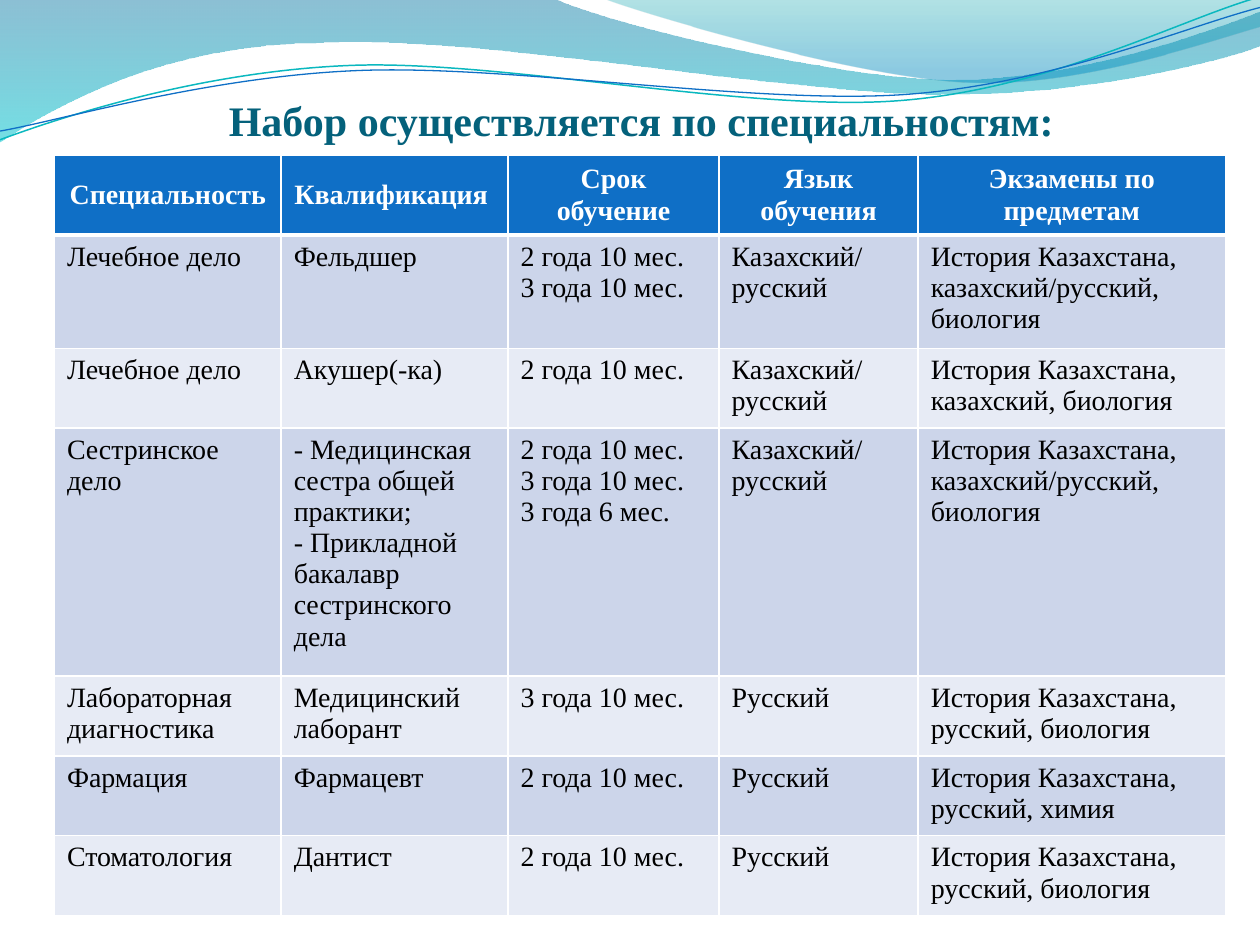
import dataclasses
import typing

import pptx
import pptx.dml.color
import pptx.enum.text
import pptx.oxml
import pptx.oxml.ns
import pptx.util

Pt = pptx.util.Pt
RGB = pptx.dml.color.RGBColor
qn = pptx.oxml.ns.qn
NS = pptx.oxml.ns.nsdecls("a")
PP_ALIGN = pptx.enum.text.PP_ALIGN
ANCHOR = pptx.enum.text.MSO_ANCHOR

FONT = "Times New Roman"
WHITE = RGB(0xFF, 0xFF, 0xFF)
BLACK = RGB(0x00, 0x00, 0x00)
BLUE = RGB(0x0F, 0x6F, 0xC6)
TITLE_BLUE = RGB(0x04, 0x61, 0x7B)
BAND_DARK = RGB(0xCC, 0xD5, 0xEA)
BAND_LIGHT = RGB(0xE7, 0xEB, 0xF5)
TEAL = RGB(0x0A, 0xB8, 0xBF)
DEEP_BLUE = RGB(0x00, 0x74, 0xA1)
CYAN = RGB(0x00, 0xC6, 0xCF)
SEA_GREEN = RGB(0x00, 0xA1, 0xA9)
SKY_BLUE = RGB(0x00, 0x8B, 0xBF)
LINE_TILT = 357.3

Point = tuple[float, float]


class Stop(typing.NamedTuple):
    position: float
    color: RGB
    opacity: int


@dataclasses.dataclass
class Wave:
    start: Point
    segments: list[tuple[Point, ...]]
    stops: tuple[Stop, ...] = ()
    line_color: RGB = WHITE
    line_width: float = 0


WAVES = [
    Wave((0, -0.7), [
        ((316.8, -0.7),),
        ((342.7, 12.2), (478.1, 45.4), (545.8, 45.4)),
        ((614.2, 45.4), (689.8, 18.7), (720, 6.5)),
        ((720.7, 25.9),),
        ((707.8, 31.7), (626.4, 54.7), (537.1, 54)),
        ((447.8, 54), (275, 20.2), (185, 24.5)),
        ((92.9, 25.2), (33.1, 59.8), (-0.7, 81.4)),
    ], stops=(Stop(0, DEEP_BLUE, 45), Stop(1, CYAN, 55))),
    Wave((344.9, -0.7), [
        ((366.5, 7.9), (491, 44.6), (553.7, 46.8)),
        ((616.3, 49.7), (691.9, 23), (720, 15.1)),
        ((720, 0),),
    ], stops=(Stop(0, SEA_GREEN, 30), Stop(0.8, SKY_BLUE, 45))),
    Wave((-1.4, 62.9), [
        ((33.8, 51.7), (114.1, 29.4), (199.8, 29.9)),
        ((284.8, 30.3), (425.9, 67.3), (512.5, 64.8)),
        ((599.1, 62.4), (676.5, 25.7), (720.2, 15.6)),
    ], line_color=TEAL, line_width=0.85),
    Wave((-1.1, 57.9), [
        ((32.9, 53.7), (118.3, 32.5), (204.1, 33)),
        ((290.5, 33.4), (428.9, 63.1), (515.5, 61.4)),
        ((601.4, 59.6), (678.4, 30.1), (721.4, 21.3)),
    ], line_color=BLUE, line_width=0.75),
]

COL_WIDTHS = [129.6, 129.6, 120.6, 113.8, 175.6]
ROW_HEIGHTS = [45.4, 64.6, 45.4, 141.7, 45.4, 45.4, 45.4]
BOTH_LANGUAGES = "Казахский/\nрусский"
ROWS = [
    ("Специальность ", "Квалификация ", "Срок обучение", "Язык обучения", "Экзамены по предметам"),
    ("Лечебное дело", "Фельдшер", "2 года 10 мес.\n3 года 10 мес.", BOTH_LANGUAGES,
     "История Казахстана, казахский/русский, биология"),
    ("Лечебное дело", "Акушер(-ка)", "2 года 10 мес.", BOTH_LANGUAGES,
     "История Казахстана, казахский, биология"),
    ("Сестринское дело",
     "- Медицинская сестра общей практики;\n- Прикладной бакалавр сестринского дела",
     "2 года 10 мес.\n3 года 10 мес.\n3 года 6 мес.", BOTH_LANGUAGES,
     "История Казахстана, казахский/русский, биология"),
    ("Лабораторная диагностика", "Медицинский лаборант", "3 года 10 мес.", "Русский",
     "История Казахстана, русский, биология"),
    ("Фармация", "Фармацевт", "2 года 10 мес.", "Русский",
     "История Казахстана, русский, химия"),
    ("Стоматология", "Дантист", "2 года 10 мес.", "Русский",
     "История Казахстана, русский, биология"),
]


def bend_segments(sp: pptx.shapes.autoshape.Shape, wave: Wave) -> None:
    """Turn each three-point run of straight lines into one cubic curve."""
    lines = iter(list(sp._element.spPr.iter(qn("a:lnTo"))))
    for seg in wave.segments:
        run = [next(lines) for _ in seg]
        if len(run) == 3:
            curve = pptx.oxml.parse_xml(f"<a:cubicBezTo {NS}/>")
            run[0].addprevious(curve)
            for line in run:
                curve.append(line[0])
                line.getparent().remove(line)


def draw_wave(s: pptx.slide.Slide, wave: Wave) -> None:
    """Draw a gradient wave or a tilted wave line."""
    points = [(Pt(x), Pt(y)) for seg in wave.segments for x, y in seg]
    builder = s.shapes.build_freeform(Pt(wave.start[0]), Pt(wave.start[1]))
    builder.add_line_segments(points, close=bool(wave.stops))
    sp = builder.convert_to_shape()
    bend_segments(sp, wave)
    sp.shadow.inherit = False
    if not wave.stops:
        sp.rotation = LINE_TILT
        sp.fill.background()
        sp.line.color.rgb = wave.line_color
        sp.line.width = Pt(wave.line_width)
        return
    sp.line.fill.background()
    sp.fill.gradient()
    sp.fill.gradient_angle = 270
    for target, stop in zip(sp.fill.gradient_stops, wave.stops):
        target.position = stop.position
        target.color.rgb = stop.color
    for clr, stop in zip(sp._element.spPr.iter(qn("a:srgbClr")), wave.stops):
        clr.append(pptx.oxml.parse_xml(f'<a:alpha {NS} val="{stop.opacity * 1000}"/>'))


def style_text(tf: pptx.text.text.TextFrame, size: float, color: RGB, bold: bool,
               align: PP_ALIGN) -> None:
    """Apply one style to every paragraph."""
    for p in tf.paragraphs:
        p.alignment = align
        p.font.name = FONT
        p.font.size = Pt(size)
        p.font.bold = bold
        p.font.color.rgb = color


def draw_title(s: pptx.slide.Slide, text: str) -> None:
    """Draw the slide heading."""
    sp = s.shapes.add_textbox(Pt(42.5), Pt(60), Pt(648), Pt(23))
    tf = sp.text_frame
    tf.word_wrap = True
    tf.vertical_anchor = ANCHOR.BOTTOM
    tf.margin_left = tf.margin_right = tf.margin_bottom = 0
    tf.margin_top = Pt(3.6)
    tf.text = text
    style_text(tf, 24, TITLE_BLUE, True, PP_ALIGN.CENTER)


def set_borders(cell: pptx.table._Cell, top: float, bottom: float) -> None:
    """Give a cell white borders."""
    tc_pr = cell._tc.get_or_add_tcPr()
    for side, width in (("L", 1), ("R", 1), ("T", top), ("B", bottom)):
        tc_pr.append(pptx.oxml.parse_xml(
            f'<a:ln{side} {NS} w="{Pt(width)}"><a:solidFill>'
            f'<a:srgbClr val="{WHITE}"/></a:solidFill></a:ln{side}>'))


def draw_table(s: pptx.slide.Slide) -> None:
    """Draw the table of specialities."""
    table = s.shapes.add_table(len(ROWS), len(COL_WIDTHS), Pt(31.1), Pt(88.6),
                               Pt(sum(COL_WIDTHS)), Pt(sum(ROW_HEIGHTS))).table
    for column, width in zip(table.columns, COL_WIDTHS):
        column.width = Pt(width)
    for i, (row, height, texts) in enumerate(zip(table.rows, ROW_HEIGHTS, ROWS)):
        row.height = Pt(height)
        header = i == 0
        for cell, text in zip(row.cells, texts):
            set_borders(cell, 3 if i == 1 else 1, 3 if header else 1)
            cell.fill.solid()
            cell.fill.fore_color.rgb = BLUE if header else (BAND_LIGHT, BAND_DARK)[i % 2]
            cell.vertical_anchor = ANCHOR.MIDDLE if header else ANCHOR.TOP
            cell.text_frame.text = text
            style_text(cell.text_frame, 16, WHITE if header else BLACK, header,
                       PP_ALIGN.CENTER if header else PP_ALIGN.LEFT)


def main() -> None:
    """Build and save the slide."""
    prs = pptx.Presentation()
    prs.slide_width, prs.slide_height = Pt(720), Pt(540)
    s = prs.slides.add_slide(prs.slide_layouts[6])
    for wave in WAVES:
        draw_wave(s, wave)
    draw_title(s, "Набор осуществляется по специальностям:")
    draw_table(s)
    prs.save("out.pptx")


if __name__ == "__main__":
    main()
